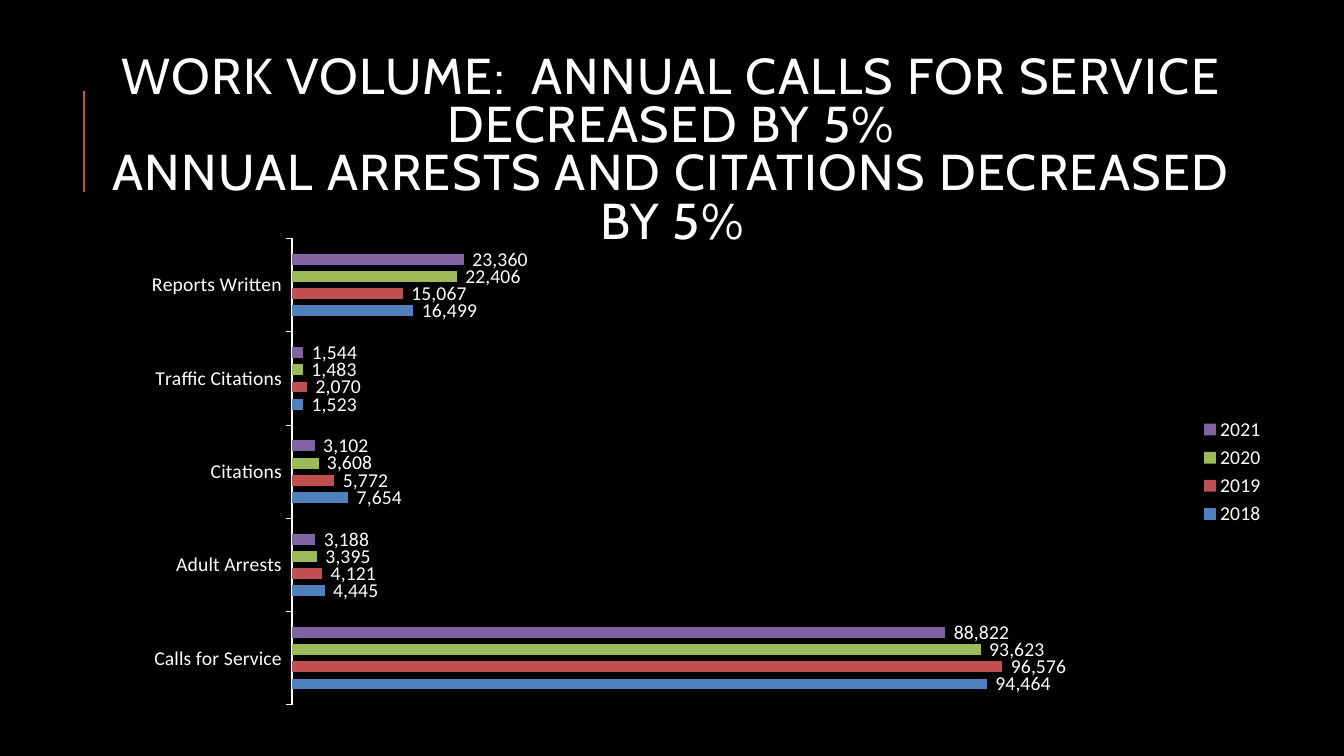
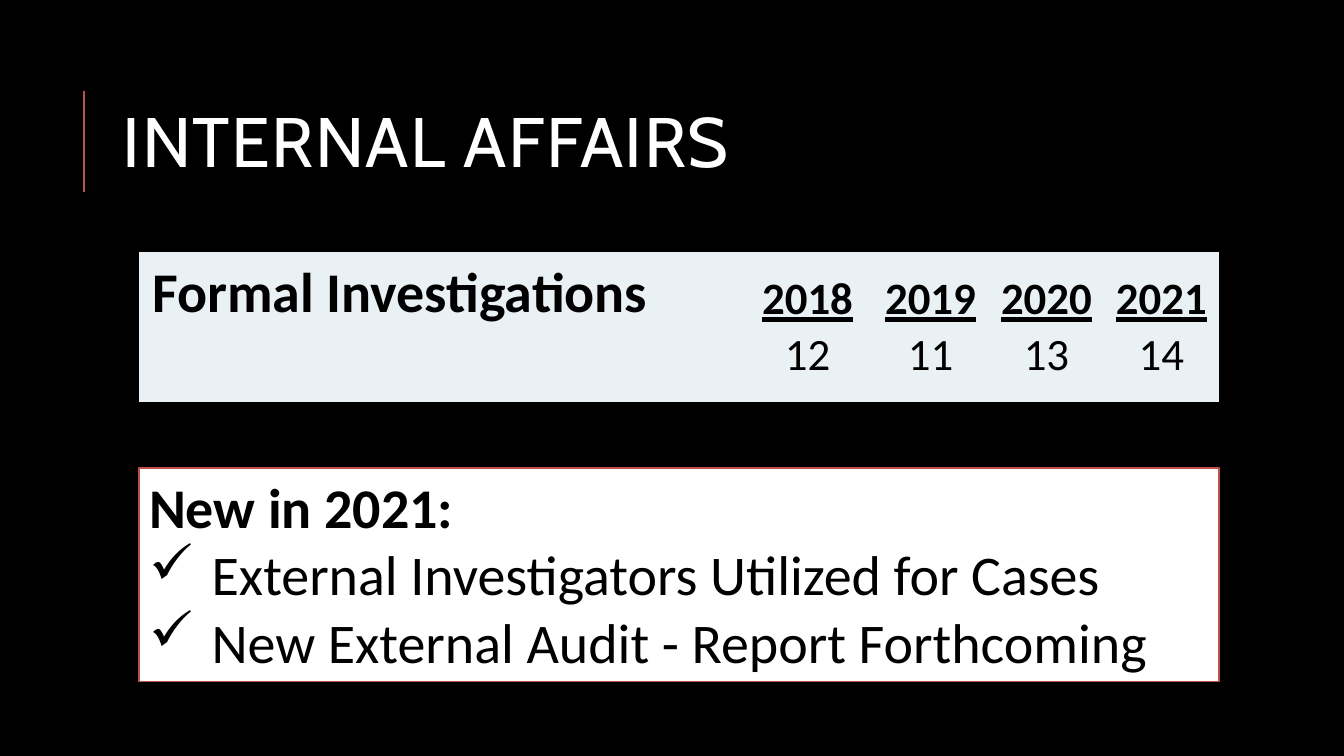
from lxml.etree import SubElement
from pptx import Presentation
from pptx.chart.data import CategoryChartData
from pptx.dml.color import RGBColor
from pptx.enum.chart import XL_CHART_TYPE as ChartType, XL_LABEL_POSITION as LabelPosition
from pptx.enum.chart import XL_LEGEND_POSITION as LegendPosition, XL_TICK_MARK as TickMark
from pptx.enum.shapes import MSO_CONNECTOR as Connector, MSO_SHAPE as Shape
from pptx.enum.text import MSO_ANCHOR as Anchor, MSO_AUTO_SIZE as AutoSize, PP_ALIGN as Align
from pptx.oxml.ns import qn
from pptx.util import Emu, Pt

PX = 9144
COLORS = {
    "background": "000000",
    "light": "FFFFFF",
    "dark": "000000",
    "accent": "C0504D",
    "table": "E9F1F5",
    "2018": "4F81BD",
    "2019": "C0504D",
    "2020": "9BBB59",
    "2021": "8064A2",
}
TITLE_FONT = "Cabin"
BODY_FONT = "Calibri"
NUMBER_FORMAT = '_(* #,##0_);_(* \\(#,##0\\);_(* "-"??_);_('
NO_TABLE_STYLE = "{2D5ABB26-0587-4C30-8999-92F81FD0307C}"

CATEGORIES = ["Calls for Service", "Adult Arrests", "Citations", "Traffic Citations", "Reports Written"]
VOLUMES = {
    "2018": [94464, 4445, 7654, 1523, 16499],
    "2019": [96576, 4121, 5772, 2070, 15067],
    "2020": [93623, 3395, 3608, 1483, 22406],
    "2021": [88822, 3188, 3102, 1544, 23360],
}
INVESTIGATIONS = {"2018": 12, "2019": 11, "2020": 13, "2021": 14}


def px(*lengths):
    return [Emu(length * PX) for length in lengths]


def color(name):
    return RGBColor.from_string(COLORS[name])


def paint(target, name):
    target.fill.solid()
    target.fill.fore_color.rgb = color(name)


def write_text(paragraph, text, size, font=BODY_FONT, ink="dark", bold=False, underline=False,
               align=Align.LEFT, line_spacing=None, tracking=None, bullet=None, indent=0):
    paragraph.alignment = align
    if line_spacing:
        paragraph.line_spacing = line_spacing
    if bullet:
        properties = paragraph._p.get_or_add_pPr()
        properties.set("marL", str(indent * PX))
        properties.set("indent", str(-indent * PX))
        SubElement(properties, qn("a:buChar")).set("char", bullet)
    for number, line in enumerate(text.split("\n")):
        if number:
            paragraph.add_line_break()
        run = paragraph.add_run()
        run.text = line
        run.font.name = font
        run.font.size = Pt(size)
        run.font.bold = bold
        run.font.underline = underline
        run.font.color.rgb = color(ink)
        if tracking:
            run.font._element.set("spc", str(tracking))


def add_titled_slide(presentation, title, box, size, align=Align.LEFT):
    slide = presentation.slides.add_slide(presentation.slide_layouts[6])
    rule = slide.shapes.add_connector(Connector.STRAIGHT, *px(83, 190, 83, 90))
    rule.line.color.rgb = color("accent")
    rule.line.width = Pt(1.5)
    SubElement(rule._element.spPr, qn("a:effectLst"))
    frame = slide.shapes.add_textbox(*px(*box)).text_frame
    frame.word_wrap = True
    frame.vertical_anchor = Anchor.MIDDLE
    write_text(frame.paragraphs[0], title, size, font=TITLE_FONT, ink="light",
               align=align, line_spacing=0.8, tracking=100)
    return slide


def add_volume_chart(slide, box):
    data = CategoryChartData(number_format=NUMBER_FORMAT)
    data.categories = CATEGORIES
    for year, values in VOLUMES.items():
        data.add_series(year, values)
    chart = slide.shapes.add_chart(ChartType.BAR_CLUSTERED, *px(*box), data).chart
    chart.has_title = False
    chart.font.name = BODY_FONT
    chart.font.size = Pt(14)
    chart.font.color.rgb = color("light")
    chart.has_legend = True
    chart.legend.position = LegendPosition.RIGHT
    chart.legend.include_in_layout = False

    chart.value_axis.visible = False
    chart.value_axis.has_major_gridlines = False
    chart.category_axis.major_tick_mark = TickMark.OUTSIDE
    chart.category_axis.format.line.color.rgb = color("light")

    plot = chart.plots[0]
    plot.gap_width = 283
    plot.overlap = -58
    plot.vary_by_categories = False
    plot.has_data_labels = True
    labels = plot.data_labels
    labels.show_value = True
    labels.position = LabelPosition.OUTSIDE_END
    labels.number_format = NUMBER_FORMAT
    labels.number_format_is_linked = False
    for series in plot.series:
        paint(series.format, series.name)


def fill_cell(cell, text, anchor, left=1, **text_format):
    cell.margin_left, cell.margin_top, cell.margin_right, cell.margin_bottom = px(left, 1, 1, 0)
    cell.vertical_anchor = anchor
    paint(cell, "table")
    if text:
        write_text(cell.text_frame.paragraphs[0], text, **text_format)


def add_investigation_table(slide, box, widths):
    table = slide.shapes.add_table(2, len(widths), *px(*box)).table
    table.first_row = table.horz_banding = False
    table._tbl.tblPr.find(qn("a:tableStyleId")).text = NO_TABLE_STYLE
    for column, width in zip(table.columns, px(*widths)):
        column.width = width
    fill_cell(table.cell(0, 0), "Formal Investigations", Anchor.BOTTOM, left=13, size=40, bold=True)
    fill_cell(table.cell(1, 0), "", Anchor.TOP)
    for column, (year, count) in enumerate(INVESTIGATIONS.items(), 1):
        fill_cell(table.cell(0, column), year, Anchor.BOTTOM, size=32, bold=True,
                  underline=True, align=Align.CENTER)
        fill_cell(table.cell(1, column), str(count), Anchor.TOP, size=32, align=Align.CENTER)


def add_news_panel(slide, box, heading, items):
    panel = slide.shapes.add_shape(Shape.RECTANGLE, *px(*box))
    panel.shadow.inherit = False
    paint(panel, "light")
    panel.line.color.rgb = color("accent")
    panel.line.width = Pt(1.25)
    frame = panel.text_frame
    frame.word_wrap = True
    frame.auto_size = AutoSize.SHAPE_TO_FIT_TEXT
    frame.vertical_anchor = Anchor.TOP
    write_text(frame.paragraphs[0], heading, 40, bold=True)
    for item in items:
        write_text(frame.add_paragraph(), item, 40, bullet="✓", indent=62)


def main():
    presentation = Presentation()
    presentation.slide_width, presentation.slide_height = px(1333, 750)
    paint(presentation.slide_master.background, "background")

    volume = add_titled_slide(
        presentation,
        "WORK VOLUME:  ANNUAL CALLS FOR SERVICE DECREASED BY 5%\n"
        "ANNUAL ARRESTS AND CITATIONS DECREASED BY 5%",
        (91, 69, 1151, 164), 36, Align.CENTER)
    add_volume_chart(volume, (128, 227, 1137, 482))

    affairs = add_titled_slide(presentation, "INTERNAL AFFAIRS", (112, 64, 1063, 164), 50)
    add_investigation_table(affairs, (138, 250, 1071, 149), (599, 128, 116, 114, 114))
    add_news_panel(affairs, (138, 464, 1071, 212), "New in 2021:", [
        "External Investigators Utilized for Cases",
        "New External Audit - Report Forthcoming",
    ])
    presentation.save("out.pptx")


if __name__ == "__main__":
    main()
